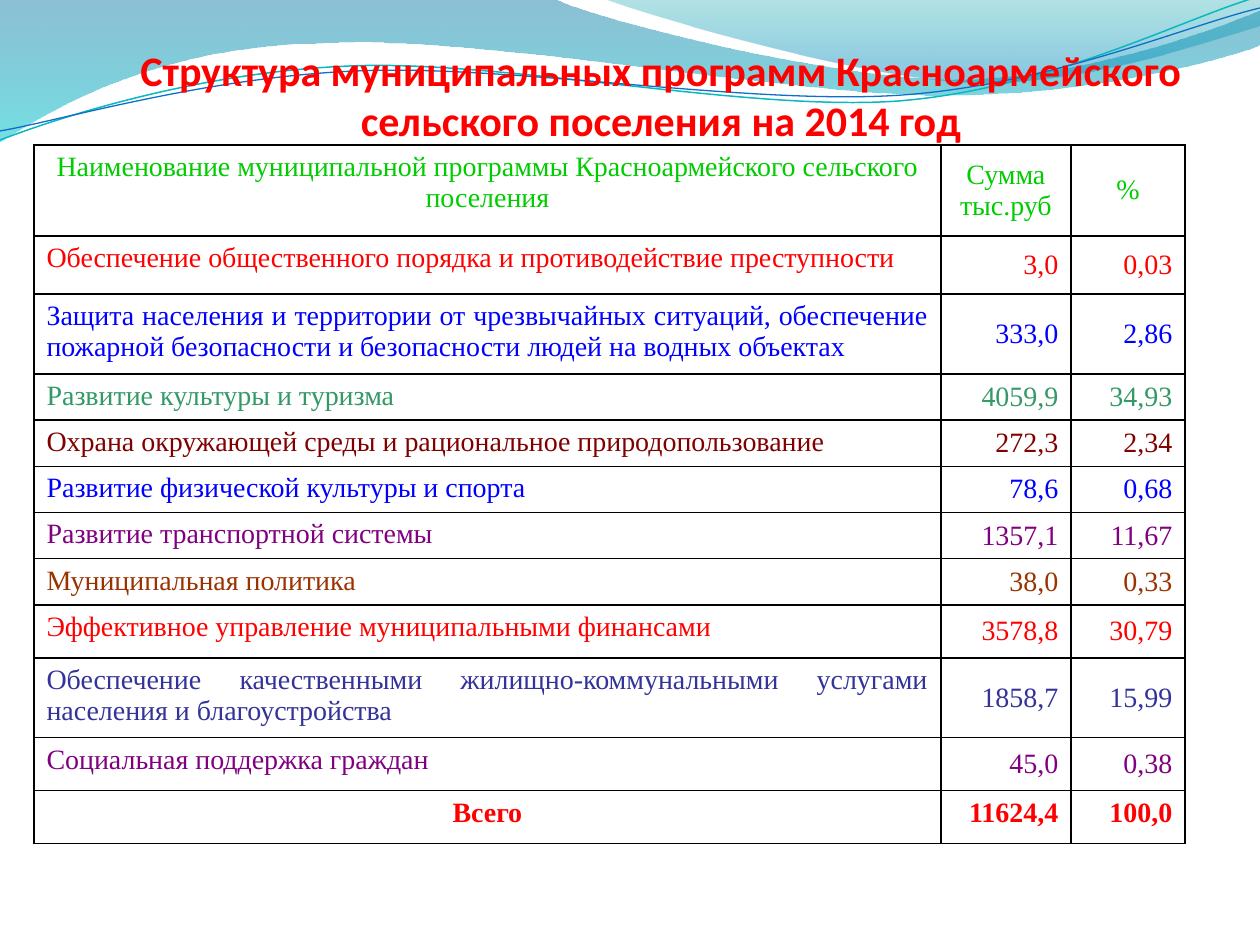
from collections import namedtuple

from lxml import etree
from pptx import Presentation
from pptx.dml.color import RGBColor
from pptx.enum.text import MSO_ANCHOR, PP_ALIGN
from pptx.oxml.ns import qn
from pptx.util import Pt

TOP, MIDDLE, BOTTOM = MSO_ANCHOR.TOP, MSO_ANCHOR.MIDDLE, MSO_ANCHOR.BOTTOM
CENTER, RIGHT, JUSTIFY = PP_ALIGN.CENTER, PP_ALIGN.RIGHT, PP_ALIGN.JUSTIFY

SCALE = 914400 / 126
BLANK_LAYOUT = 6

Box = namedtuple("Box", "left top width height")

COLORS = {
    "black": "000000", "red": "FF0000", "lime": "00CC00", "blue": "0000FF",
    "green": "339966", "maroon": "800000", "purple": "800080",
    "brown": "993300", "indigo": "333399",
    "deep blue": "0074A1", "cyan": "00C6CF", "teal": "00A1A9",
    "sky blue": "008BBF", "turquoise line": "0AB8BF", "blue line": "0F6FC6",
}

WAVES = [
    ([(0, 0), (554, -1), (600, 21, 837, 79, 955, 79),
      (1075, 79, 1207, 33, 1260, 11), (1261, 45),
      (1239, 55, 1096, 96, 940, 95), (784, 95, 481, 35, 324, 43),
      (163, 45, 58, 105, -1, 142), (0, 0)],
     [(0, "deep blue", 45), (1, "cyan", 55)]),
    ([(604, -1), (641, 14, 859, 78, 969, 82),
      (1079, 87, 1211, 40, 1260, 26), (1260, 0), (604, -1)],
     [(0, "teal", 30), (0.8, "sky blue", 45)]),
]
STRANDS = [
    ([(0, 140), (60, 117, 199, 72, 349, 66), (498, 59, 747, 112, 898, 101),
      (1050, 89, 1182, 19, 1257, -3)], "turquoise line", 0.85),
    ([(0, 131), (59, 121, 207, 77, 357, 71), (508, 64, 751, 106, 903, 95),
      (1053, 84, 1185, 26, 1260, 8)], "blue line", 0.75),
]

TITLE = "Структура муниципальных программ Красноармейского сельского поселения на 2014 год"
HEADER = ("Наименование муниципальной программы Красноармейского сельского поселения",
          "Сумма тыс.руб", "%")
PROGRAMS = [
    ("Обеспечение общественного порядка и противодействие преступности",
     "3,0", "0,03", "red", 58),
    ("Защита населения и территории от чрезвычайных ситуаций, обеспечение "
     "пожарной безопасности и безопасности людей на водных объектах",
     "333,0", "2,86", "blue", 74),
    ("Развитие культуры и туризма", "4059,9", "34,93", "green", 43),
    ("Охрана окружающей среды и рациональное природопользование",
     "272,3", "2,34", "maroon", 43),
    ("Развитие физической культуры и спорта", "78,6", "0,68", "blue", 43),
    ("Развитие транспортной системы", "1357,1", "11,67", "purple", 43),
    ("Муниципальная политика", "38,0", "0,33", "brown", 43),
    ("Эффективное управление муниципальными финансами",
     "3578,8", "30,79", "red", 53),
    ("Обеспечение качественными жилищно-коммунальными услугами населения "
     "и благоустройства", "1858,7", "15,99", "indigo", 74),
    ("Социальная поддержка граждан", "45,0", "0,38", "purple", 53),
]
TOTAL = ("Всего", "11624,4", "100,0")
COLUMN_WIDTHS = (907, 130, 114)
HEADER_HEIGHT, TOTAL_HEIGHT = 91, 53


def emu(px):
    return round(px * SCALE)


def rgb(name):
    return RGBColor.from_string(COLORS[name])


def write(frame, text, *, font, size, color, align, bold=False):
    para = frame.paragraphs[0]
    para.alignment = align
    span = para.add_run()
    span.text = text
    span.font.name = font
    span.font.size = Pt(size)
    span.font.bold = bold
    span.font.color.rgb = rgb(color)
    ending = etree.SubElement(para._p, qn("a:endParaRPr"), sz=str(size * 100))
    etree.SubElement(ending, qn("a:latin"), typeface=font)


def add_outline(page, box, segments, close):
    points = [(emu(box.left + segment[i]), emu(box.top + segment[i + 1]))
              for segment in segments for i in range(0, len(segment), 2)]
    builder = page.shapes.build_freeform(*points[0], scale=1.0)
    builder.add_line_segments(points[1:], close=close)
    shape = builder.convert_to_shape()
    shape.shadow.inherit = False
    lines = iter(list(shape.element.iter(qn("a:lnTo"))))
    for segment in segments[1:]:
        line = next(lines)
        if len(segment) == 6:
            curve = etree.Element(qn("a:cubicBezTo"))
            line.addprevious(curve)
            for control in (line, next(lines), next(lines)):
                curve.append(control[0])
                control.getparent().remove(control)
    return shape


def add_waves(page, box):
    for segments, stops in WAVES:
        wave = add_outline(page, box, segments, True)
        wave.line.fill.background()
        wave.fill.gradient()
        wave.fill.gradient_angle = 270
        for stop, (position, color, opacity) in zip(wave.fill.gradient_stops, stops):
            stop.position = position
            stop.color.rgb = rgb(color)
        for tint, (position, color, opacity) in zip(
                wave.element.spPr.iter(qn("a:srgbClr")), stops):
            etree.SubElement(tint, qn("a:alpha"), val=str(opacity * 1000))
    for segments, color, width in STRANDS:
        strand = add_outline(page, box, segments, False)
        strand.fill.background()
        strand.line.color.rgb = rgb(color)
        strand.line.width = Pt(width)


def add_title(page, box):
    frame = page.shapes.add_textbox(*map(emu, box)).text_frame
    frame.word_wrap = True
    frame.vertical_anchor = BOTTOM
    frame.margin_left = frame.margin_right = frame.margin_bottom = 0
    frame.margin_top = emu(6)
    write(frame, TITLE, font="Calibri", size=24, color="red", align=CENTER, bold=True)


def add_borders(cell):
    properties = cell._tc.get_or_add_tcPr()
    for index, side in enumerate(("lnL", "lnR", "lnT", "lnB")):
        line = etree.Element(qn("a:" + side), w=str(Pt(1)))
        fill = etree.SubElement(line, qn("a:solidFill"))
        etree.SubElement(fill, qn("a:srgbClr"), val=COLORS["black"])
        properties.insert(index, line)


def add_programs_table(page, box):
    rows = [(HEADER, "lime", HEADER_HEIGHT, (CENTER, CENTER), MIDDLE, False)]
    rows += [(texts, color, height, (JUSTIFY, RIGHT), MIDDLE, False)
             for *texts, color, height in PROGRAMS]
    rows.append((TOTAL, "red", TOTAL_HEIGHT, (CENTER, RIGHT), TOP, True))

    table = page.shapes.add_table(len(rows), len(COLUMN_WIDTHS), *map(emu, box)).table
    table.first_row = table.horz_banding = False
    for column, width in zip(table.columns, COLUMN_WIDTHS):
        column.width = emu(width)
    for row, (texts, color, height, aligns, anchor, bold) in zip(table.rows, rows):
        row.height = emu(height)
        for index, (cell, text) in enumerate(zip(row.cells, texts)):
            cell.fill.background()
            cell.vertical_anchor = anchor if index else TOP
            add_borders(cell)
            write(cell.text_frame, text, font="Times New Roman", size=16,
                  color=color, align=aligns[min(index, 1)], bold=bold)


def main():
    deck = Presentation()
    deck.slide_width, deck.slide_height = emu(1260), emu(945)
    page = deck.slides.add_slide(deck.slide_layouts[BLANK_LAYOUT])
    add_waves(page, Box(0, 0, 1260, 142))
    add_title(page, Box(126, 35, 1070, 110))
    add_programs_table(page, Box(34, 145, sum(COLUMN_WIDTHS), 675))
    deck.save("out.pptx")


if __name__ == "__main__":
    main()
